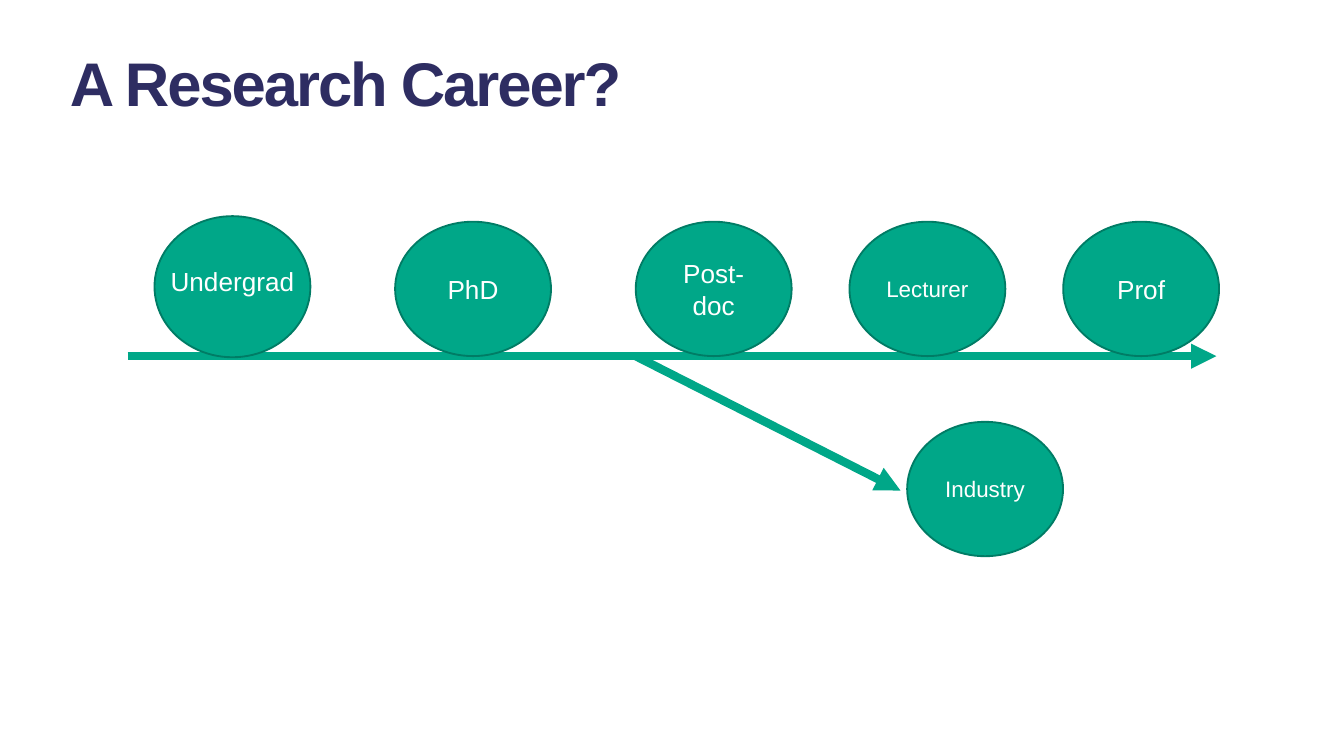
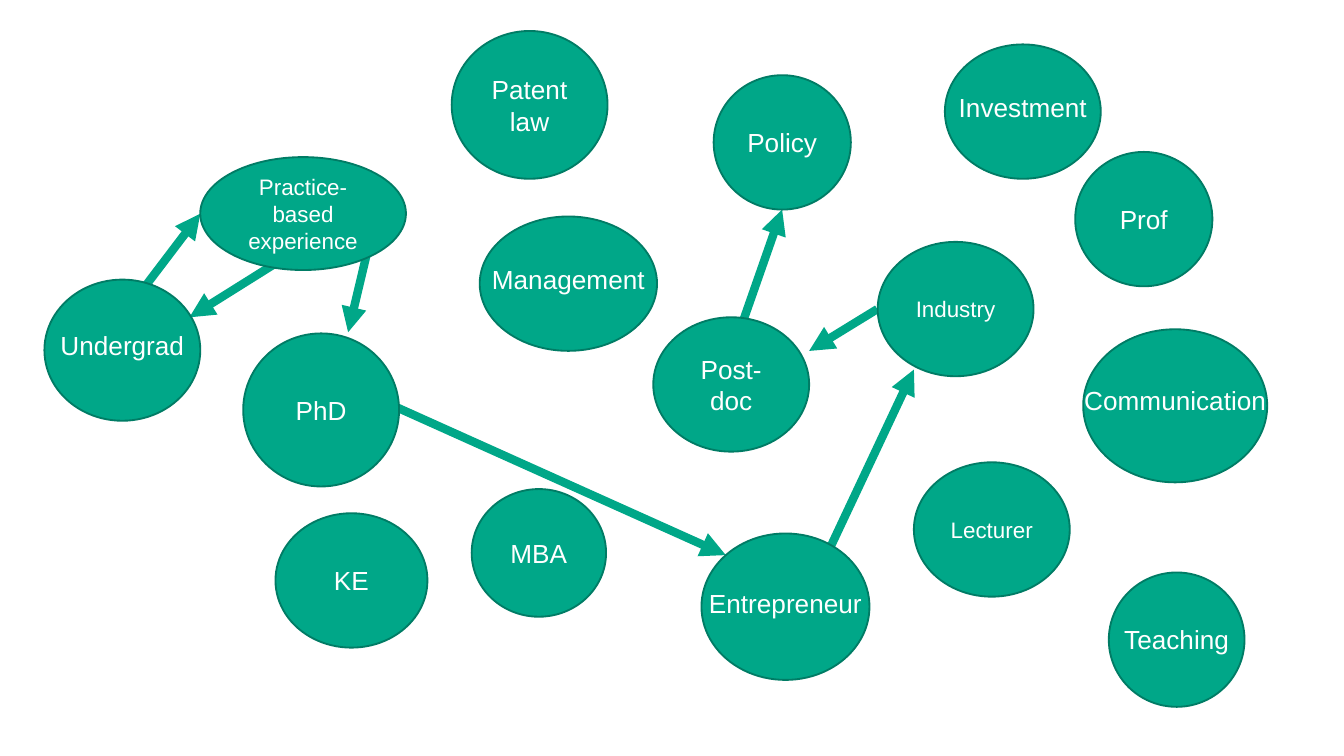
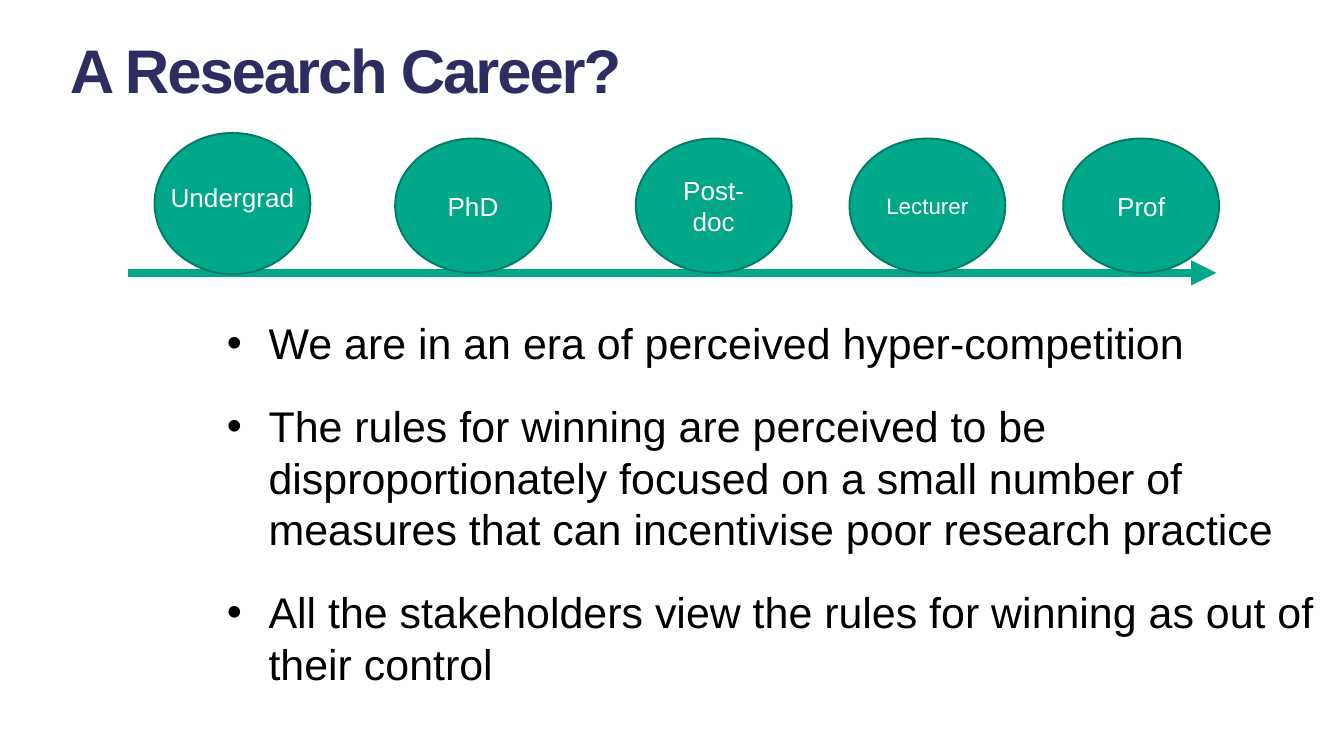
from dataclasses import dataclass
from typing import NamedTuple, Optional

from lxml import etree
from pptx import Presentation
from pptx import util as u
from pptx.dml.color import RGBColor
from pptx.enum import shapes, text
from pptx.oxml import ns

Pt = u.Pt


@dataclass(frozen=True)
class Theme:
    font: str = "Arial"
    green: str = "00A788"
    edge: str = "007C65"
    navy: str = "2E2D62"
    white: str = "FFFFFF"
    black: str = "000000"
    head: float = 33
    body: float = 23
    label: float = 14
    small: float = 12
    arrow: float = 4.5
    rim: float = 1


THEME = Theme()


class Label(NamedTuple):
    """A one-line box centred on its bubble, set down from the bubble's top."""
    width: float
    drop: float
    height: float = 24.5


class Bubble(NamedTuple):
    words: str
    left: float
    top: float
    width: float = 83.5
    height: float = 72
    size: float = THEME.label
    label: Optional[Label] = None


class Arrow(NamedTuple):
    x1: float
    y1: float
    x2: float
    y2: float


STAGES = [("Undergrad", THEME.label), ("PhD", THEME.label), ("Post-doc", THEME.label),
          ("Lecturer", THEME.small), ("Prof", THEME.label)]

PATHS = [
    Arrow(396, 178, 419, 112.3),
    Arrow(470, 165.6, 433.5, 188),
    Arrow(444, 295, 489.6, 198),
    Arrow(198, 211.7, 388.8, 297.4),
    Arrow(198, 129.6, 186.5, 178),
    Arrow(77.8, 153.4, 107.3, 114.5),
    Arrow(153.4, 137.5, 101.5, 170),
]

ROLES = [
    Bubble("PhD", 130.3, 178.6, height=82),
    Bubble("Post-doc", 350, 170),
    Bubble("MBA", 252.7, 262, 72, 68.4),
    Bubble("Practice-based experience", 107.3, 84.2, 110.2, 60.5, THEME.small),
    Bubble("Lecturer", 489.6, 247.7, size=THEME.small),
    Bubble("Prof", 576, 81.4, 73.5),
    Bubble("Policy", 382.3, 40.3, 73.5),
    Bubble("Industry", 470.2, 129.6, size=THEME.small),
    Bubble("KE", 147.6, 275, 81.4),
    Bubble("Patent law", 242, 16.6, height=79.2),
    Bubble("Undergrad", 23.8, 149.8, height=75.6, label=Label(81.4, 23)),
    Bubble("Entrepreneur", 375.8, 285.8, 90, 78.5, label=Label(96.5, 25.2)),
    Bubble("Investment", 506.2, 23.8, label=Label(83.5, 21.6)),
    Bubble("Communication", 580.3, 176.4, 98.6, 82, label=Label(112.3, 26, 27.4)),
    Bubble("Management", 257, 116, 95, label=Label(96.5, 21.6)),
    Bubble("Teaching", 594, 306.7, 72.7, label=Label(72.7, 23.8)),
]

POINTS = [
    "We are in an era of perceived hyper-competition",
    "The rules for winning are perceived to be disproportionately focused on "
    "a small number of measures that can incentivise poor research practice",
    "All the stakeholders view the rules for winning as out of their control",
]


def tint(code: str) -> RGBColor:
    return RGBColor.from_string(code)


def write(para, words: str, *, size: float, color: str, bold: bool = False,
          align=text.PP_ALIGN.LEFT, track: float = 0) -> None:
    """Add one run to a paragraph; track is letter spacing in points."""
    para.alignment = align
    run = para.add_run()
    run.text = words
    run.font.name = THEME.font
    run.font.size = Pt(size)
    run.font.bold = bold
    run.font.color.rgb = tint(color)
    if track:
        run._r.get_or_add_rPr().set("spc", str(round(track * 100)))


def add_title(slide, top: float) -> None:
    title = slide.shapes.title
    title.left, title.top, title.width, title.height = Pt(30.2), Pt(top), Pt(620.6), Pt(78.5)
    frame = title.text_frame
    frame.word_wrap = True
    frame.auto_size = text.MSO_AUTO_SIZE.NONE
    frame.vertical_anchor = text.MSO_ANCHOR.TOP
    para = frame.paragraphs[0]
    para.line_spacing = 0.9
    write(para, "A Research Career?", size=THEME.head, color=THEME.navy, bold=True, track=-1.1)


def add_arrow(slide, arrow: Arrow) -> None:
    link = slide.shapes.add_connector(shapes.MSO_CONNECTOR.STRAIGHT, *map(Pt, arrow))
    link.line.color.rgb = tint(THEME.green)
    link.line.width = Pt(THEME.arrow)
    etree.SubElement(link.line._get_or_add_ln(), ns.qn("a:tailEnd"), type="triangle")
    etree.SubElement(link._element.spPr, ns.qn("a:effectLst"))


def add_bubble(slide, item: Bubble) -> None:
    oval = slide.shapes.add_shape(shapes.MSO_SHAPE.OVAL, Pt(item.left), Pt(item.top),
                                  Pt(item.width), Pt(item.height))
    oval.shadow.inherit = False
    oval.fill.solid()
    oval.fill.fore_color.rgb = tint(THEME.green)
    oval.line.color.rgb = tint(THEME.edge)
    oval.line.width = Pt(THEME.rim)
    frame = oval.text_frame
    if item.label:
        left = item.left + (item.width - item.label.width) / 2
        box = slide.shapes.add_textbox(Pt(left), Pt(item.top + item.label.drop),
                                       Pt(item.label.width), Pt(item.label.height))
        frame = box.text_frame
        frame.auto_size = text.MSO_AUTO_SIZE.SHAPE_TO_FIT_TEXT
    else:
        frame.vertical_anchor = text.MSO_ANCHOR.MIDDLE
    frame.word_wrap = item.label is None
    write(frame.paragraphs[0], item.words, size=item.size, color=THEME.white,
          align=text.PP_ALIGN.CENTER)


def add_career(slide, base: float) -> None:
    """Draw the career arrow at height base, with its stages standing on it."""
    add_arrow(slide, Arrow(68.4, base, 651.6, base))
    for i, (words, size) in enumerate(STAGES):
        left = 82.8 + 128.9 * min(i, 2) + 114.5 * max(i - 2, 0)
        if i == 0:
            item = Bubble(words, left, base - 75, height=75.6, label=Label(81.4, 22.7))
        else:
            item = Bubble(words, left, base - 72, size=size)
        add_bubble(slide, item)


def add_points(slide) -> None:
    box = slide.shapes.add_textbox(Pt(114.5), Pt(166), Pt(605.5), Pt(208.4))
    frame = box.text_frame
    frame.word_wrap = True
    frame.auto_size = text.MSO_AUTO_SIZE.SHAPE_TO_FIT_TEXT
    for i, words in enumerate(POINTS):
        para = frame.add_paragraph() if i else frame.paragraphs[0]
        props = para._p.get_or_add_pPr()
        props.set("marL", str(Pt(22.3)))
        props.set("indent", str(-Pt(22.3)))
        color = etree.SubElement(props, ns.qn("a:buClr"))
        etree.SubElement(color, ns.qn("a:srgbClr"), val=THEME.black)
        etree.SubElement(props, ns.qn("a:buFont"), typeface=THEME.font)
        etree.SubElement(props, ns.qn("a:buChar"), char="•")
        if i:
            para.space_before = Pt(17)
        write(para, words, size=THEME.body, color=THEME.black)


def main() -> None:
    deck = Presentation()
    deck.slide_width, deck.slide_height = Pt(720), Pt(405)
    titled, blank = deck.slide_layouts[5], deck.slide_layouts[6]

    line = deck.slides.add_slide(titled)
    add_title(line, 25.2)
    add_career(line, 190.8)
    add_bubble(line, Bubble("Industry", 486, 226, size=THEME.small))
    add_arrow(line, Arrow(340.6, 190.8, 482.4, 262.8))

    web = deck.slides.add_slide(blank)
    for path in PATHS:
        add_arrow(web, path)
    for role in ROLES:
        add_bubble(web, role)

    rules = deck.slides.add_slide(titled)
    add_title(rules, 18)
    add_points(rules)
    add_career(rules, 146.2)

    deck.save("out.pptx")


if __name__ == "__main__":
    main()
